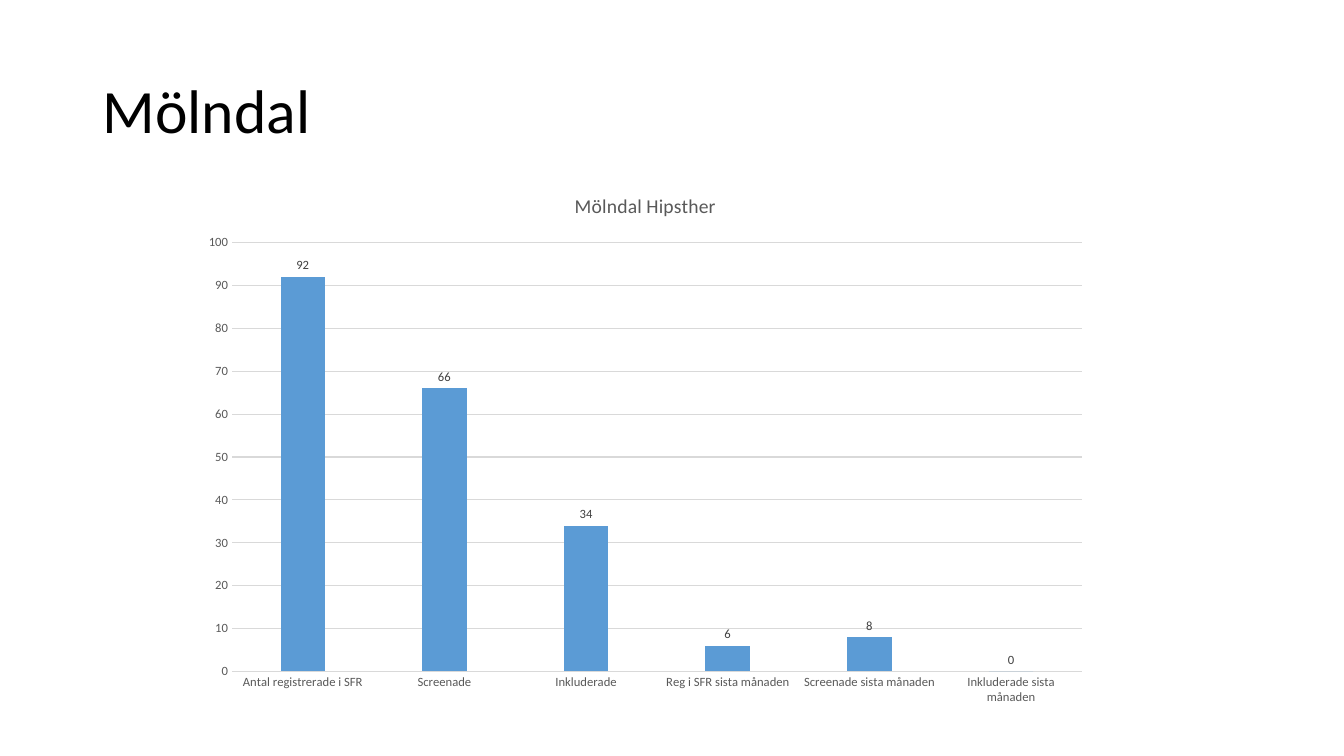
"""Build the Mölndal slide with its column chart."""
import pptx
import pptx.chart.data
import pptx.dml.color
import pptx.enum.chart
import pptx.enum.text
import pptx.util
from pptx.util import Inches


def paint(font, size, color):
    font.name = "Calibri"
    font.size = pptx.util.Pt(size)
    font.bold = False
    font.color.rgb = pptx.dml.color.RGBColor.from_string(color)


def rule(line, color):
    line.color.rgb = pptx.dml.color.RGBColor.from_string(color)
    line.width = pptx.util.Pt(0.75)


deck = pptx.Presentation()
deck.slide_width = Inches(13.33)
deck.slide_height = Inches(7.5)
slide = deck.slides.add_slide(deck.slide_layouts[6])

box = slide.shapes.add_textbox(Inches(0.92), Inches(0.4), Inches(11.5), Inches(1.45))
frame = box.text_frame
frame.word_wrap = True
frame.vertical_anchor = pptx.enum.text.MSO_ANCHOR.MIDDLE
head = frame.paragraphs[0]
head.text = "Mölndal"
head.line_spacing = 0.9
paint(head.font, 44, "000000")

counts = {
    "Antal registrerade i SFR": 92,
    "Screenade": 66,
    "Inkluderade": 34,
    "Reg i SFR sista månaden": 6,
    "Screenade sista månaden": 8,
    "Inkluderade sista månaden": 0,
}
data = pptx.chart.data.CategoryChartData()
data.categories = list(counts)
data.add_series("Series 1", list(counts.values()))
chart = slide.shapes.add_chart(
    pptx.enum.chart.XL_CHART_TYPE.COLUMN_CLUSTERED,
    Inches(1.89), Inches(1.71), Inches(9.02), Inches(5.39), data).chart
paint(chart.font, 10, "000000")
chart.has_legend = False
chart.has_title = True
title = chart.chart_title.text_frame.paragraphs[0]
title.text = "Mölndal Hipsther"
paint(title.font, 14, "595959")
chart.chart_title.include_in_layout = False

for axis in (chart.category_axis, chart.value_axis):
    axis.major_tick_mark = pptx.enum.chart.XL_TICK_MARK.NONE
    axis.minor_tick_mark = pptx.enum.chart.XL_TICK_MARK.NONE
    paint(axis.tick_labels.font, 9, "595959")
rule(chart.category_axis.format.line, "D9D9D9")
scale = chart.value_axis
scale.minimum_scale = 0
scale.maximum_scale = 100
scale.major_unit = 10
scale.format.line.fill.background()
scale.has_major_gridlines = True
rule(scale.major_gridlines.format.line, "D9D9D9")

plot = chart.plots[0]
plot.gap_width = 219
plot.overlap = -27
plot.vary_by_categories = False
bars = plot.series[0]
bars.format.fill.solid()
bars.format.fill.fore_color.rgb = pptx.dml.color.RGBColor.from_string("5B9BD5")
labels = bars.data_labels
labels.show_value = True
labels.position = pptx.enum.chart.XL_LABEL_POSITION.OUTSIDE_END
paint(labels.font, 9, "404040")

deck.save("out.pptx")
